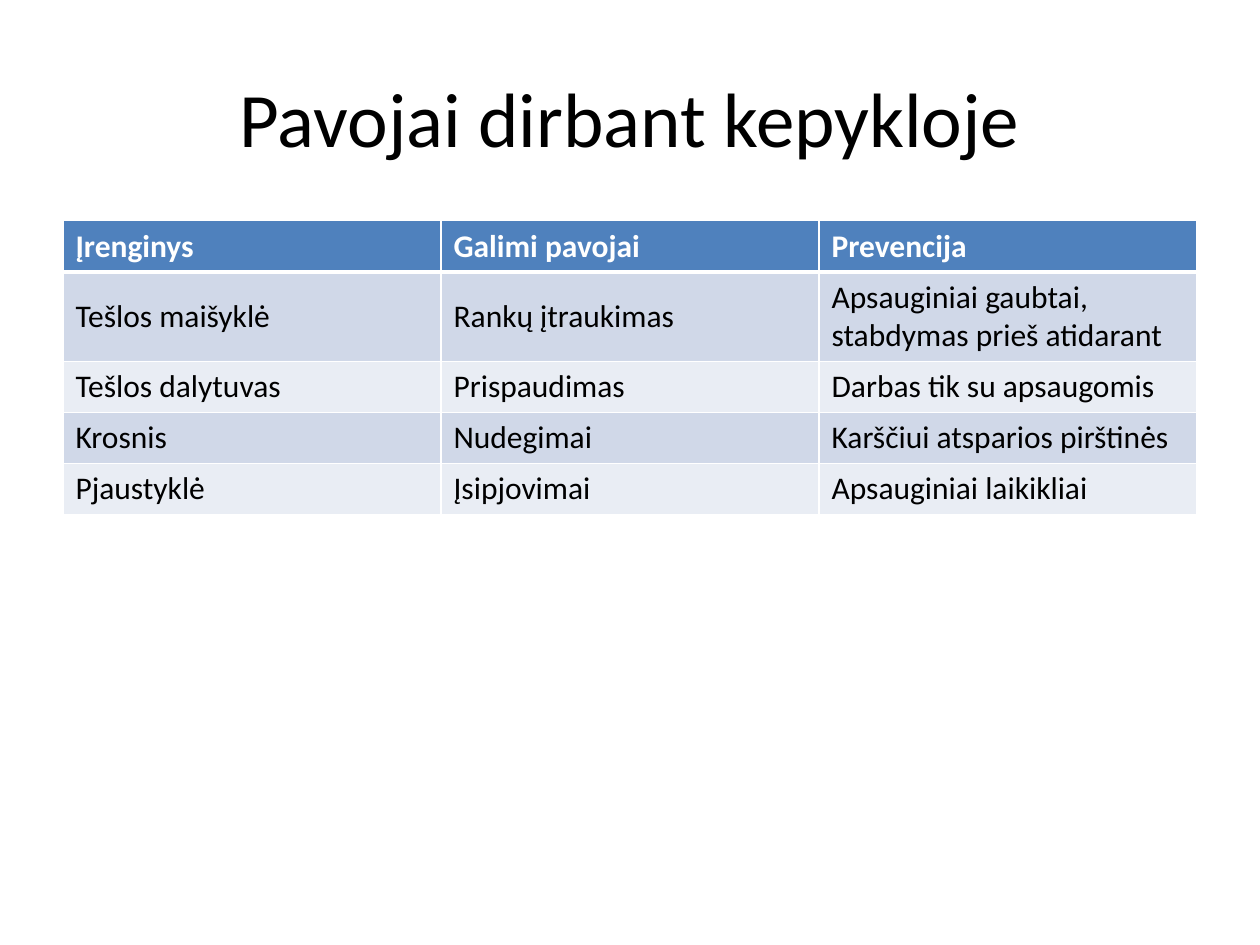
import dataclasses

import lxml.etree
import pptx
import pptx.dml.color
import pptx.enum.text
import pptx.oxml.ns
import pptx.util
from pptx.util import Cm

FONT = "Calibri"
COLORS = {
    "text": "000000",
    "header_text": "FFFFFF",
    "border": "FFFFFF",
    "header": "4F81BD",
    "odd": "D0D8E8",
    "even": "E9EDF4",
}
THIN, THICK = 1, 3
ROW_HEIGHT = Cm(1.03)
MIDDLE = pptx.enum.text.MSO_ANCHOR.MIDDLE


@dataclasses.dataclass
class Hazard:
    device: str
    danger: str
    prevention: str


HEADER = Hazard("Įrenginys", "Galimi pavojai", "Prevencija")
HAZARDS = [
    Hazard("Tešlos maišyklė", "Rankų įtraukimas",
           "Apsauginiai gaubtai, stabdymas prieš atidarant"),
    Hazard("Tešlos dalytuvas", "Prispaudimas", "Darbas tik su apsaugomis"),
    Hazard("Krosnis", "Nudegimai", "Karščiui atsparios pirštinės"),
    Hazard("Pjaustyklė", "Įsipjovimai", "Apsauginiai laikikliai"),
]


def rgb(name: str) -> pptx.dml.color.RGBColor:
    return pptx.dml.color.RGBColor.from_string(COLORS[name])


def style_paragraph(para, size: int, color: str, bold: bool = False) -> None:
    para.font.name = FONT
    para.font.size = pptx.util.Pt(size)
    para.font.bold = bold
    para.font.color.rgb = rgb(color)


def add_borders(cell, top: int, bottom: int) -> None:
    """Draw the four edges; they must come before the fill in the XML."""
    qn = pptx.oxml.ns.qn
    properties = cell._tc.get_or_add_tcPr()
    for edge, width in (("L", THIN), ("R", THIN), ("T", top), ("B", bottom)):
        line = lxml.etree.SubElement(
            properties, qn(f"a:ln{edge}"), w=str(pptx.util.Pt(width)))
        fill = lxml.etree.SubElement(line, qn("a:solidFill"))
        lxml.etree.SubElement(fill, qn("a:srgbClr"), val=COLORS["border"])


def fill_row(table, index: int, hazard: Hazard) -> None:
    is_header = index == 0
    fill = "header" if is_header else ("even", "odd")[index % 2]
    table.rows[index].height = ROW_HEIGHT
    for cell, text in zip(table.rows[index].cells, dataclasses.astuple(hazard)):
        add_borders(cell, top=THICK if index == 1 else THIN,
                    bottom=THICK if is_header else THIN)
        cell.fill.solid()
        cell.fill.fore_color.rgb = rgb(fill)
        cell.vertical_anchor = MIDDLE
        cell.text = text
        style_paragraph(cell.text_frame.paragraphs[0], 18,
                        "header_text" if is_header else "text", is_header)


def main() -> None:
    deck = pptx.Presentation()
    deck.slide_width, deck.slide_height = Cm(25.4), Cm(19.05)
    page = deck.slides.add_slide(deck.slide_layouts.get_by_name("Title Only"))

    # Title
    title = page.shapes.title
    title.left, title.top = Cm(1.27), Cm(0.76)
    title.width, title.height = Cm(22.86), Cm(3.18)
    title.text_frame.text = "Pavojai dirbant kepykloje"
    title.text_frame.vertical_anchor = MIDDLE
    para = title.text_frame.paragraphs[0]
    para.alignment = pptx.enum.text.PP_ALIGN.CENTER
    style_paragraph(para, 44, "text")

    # Hazard table
    rows = [HEADER, *HAZARDS]
    table = page.shapes.add_table(
        len(rows), len(dataclasses.fields(Hazard)),
        Cm(1.27), Cm(4.45), Cm(22.86), ROW_HEIGHT * len(rows)).table
    for index, hazard in enumerate(rows):
        fill_row(table, index, hazard)

    deck.save("out.pptx")


if __name__ == "__main__":
    main()
